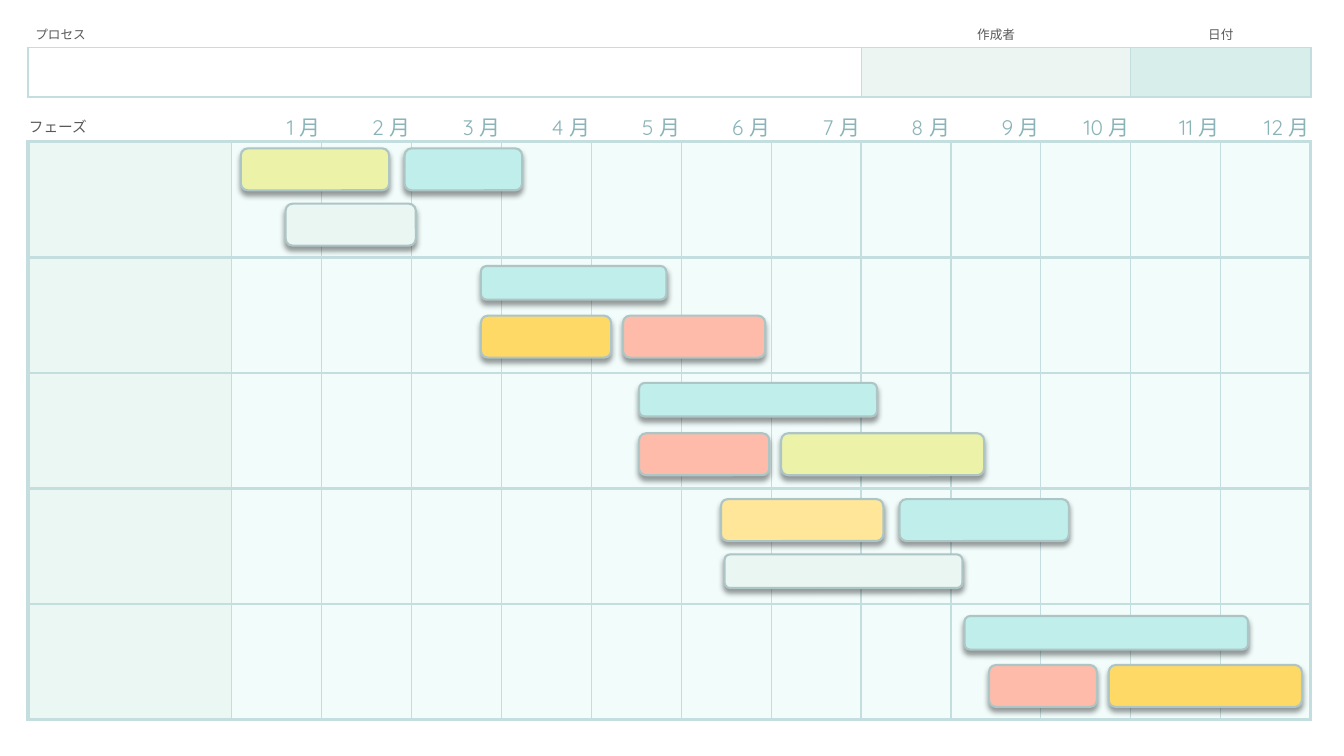
import pptx
import pptx.chart
import pptx.dml.color
import pptx.enum.shapes
import pptx.enum.text
import pptx.oxml
import pptx.oxml.ns
import pptx.util
from lxml import etree

Pt = pptx.util.Pt
ALIGN = pptx.enum.text.PP_ALIGN
FONT = "Quicksand"
GRID = "C4DDDE"
TEXT = "595959"
MONTH = "8AB4B8"
PHASE_FILL = "EAF7F2"
MONTH_FILL = "F2FDFB"
BAR_LINE = "AEC5C6"
NO_STYLE = "{2D5ABB26-0587-4C30-8999-92F81FD0307C}"
LIME, AQUA, MINT = "EDF2A9", "BFEEEB", "E9F6F2"
GOLD, CORAL, SAND = "FFD966", "FFBBAA", "FFE699"

PROCESS_COLUMNS = [
    ("プロセス", 595.4, "FFFFFF", ALIGN.LEFT, 5.2),
    ("作成者", 192.2, "EDF5F3", ALIGN.CENTER, 0.7),
    ("日付", 128.9, "D7EEEB", ALIGN.CENTER, 0.7),
]
PHASE_LABEL = "フェーズ"
MONTHS = [f"{number} 月" for number in range(1, 13)]
PHASE_COUNT = 5

TRACKS = [
    (106, 30, [(172, 106, LIME), (289, 84, AQUA)]),
    (145.5, 30, [(204, 93, MINT)]),
    (190, 24, [(343.5, 132.5, AQUA)]),
    (225.5, 30, [(343.5, 93, GOLD), (445, 101.5, CORAL)]),
    (273.5, 24, [(456.5, 170, AQUA)]),
    (309.5, 30, [(456.5, 93, CORAL), (558, 145, LIME)]),
    (356.5, 30, [(515, 116, SAND), (642.5, 121, AQUA)]),
    (396, 24, [(517.5, 170, MINT)]),
    (440, 24, [(689, 202.5, AQUA)]),
    (475, 30, [(706.5, 77, CORAL), (792, 138, GOLD)]),
]


def apply(target, values):
    for key, value in values.items():
        setattr(target, key, value)


def rgb(value):
    return pptx.dml.color.RGBColor.from_string(value)


def paint(fill, value):
    fill.solid()
    fill.fore_color.rgb = rgb(value)


def element(parent, tag, **attributes):
    return etree.SubElement(parent, pptx.oxml.ns.qn(tag), attributes)


def add_grid(slide, top, widths, heights):
    frame = slide.shapes.add_table(
        len(heights), len(widths), Pt(20), Pt(top), Pt(sum(widths)), Pt(sum(heights))
    )
    grid = frame.table
    apply(grid, {"first_row": False, "horz_banding": False})
    grid._tbl.tblPr.find(pptx.oxml.ns.qn("a:tableStyleId")).text = NO_STYLE
    for column, width in zip(grid.columns, widths):
        column.width = Pt(width)
    for row, height in zip(grid.rows, heights):
        row.height = Pt(height)
    return grid


def write_heading(cell, text, size, color, align, inset=0.7):
    apply(cell, {
        "margin_left": Pt(inset), "margin_right": Pt(0.7),
        "margin_top": Pt(0.7), "margin_bottom": 0,
        "vertical_anchor": pptx.enum.text.MSO_ANCHOR.MIDDLE,
    })
    paragraph = cell.text_frame.paragraphs[0]
    paragraph.alignment = align
    run = paragraph.add_run()
    run.text = text
    apply(run.font, {"size": Pt(size), "name": FONT})
    run.font.color.rgb = rgb(color)


def set_borders(cell, **widths):
    properties = cell._tc.get_or_add_tcPr()
    sides = [side for side in "LRTB" if side in widths]
    for position, side in enumerate(sides):
        line = element(properties, f"a:ln{side}", w=str(Pt(widths[side])))
        element(element(line, "a:solidFill"), "a:srgbClr", val=GRID)
        properties.insert(position, line)


def add_process_table(slide):
    widths = [column[1] for column in PROCESS_COLUMNS]
    grid = add_grid(slide, 13.9, widths, [20.2, 35.3])
    for index, (label, _, fill, align, inset) in enumerate(PROCESS_COLUMNS):
        heading, entry = grid.cell(0, index), grid.cell(1, index)
        write_heading(heading, label, 9, TEXT, align, inset)
        set_borders(heading, B=1)
        paint(entry.fill, fill)
        set_borders(entry, L=1 if index else 2.25, R=1, T=1, B=2.25)


def add_schedule(slide):
    last = len(MONTHS)
    grid = add_grid(slide, 78.8, [145.4] + [64.25] * last, [21.6] + [82.6] * PHASE_COUNT)
    write_heading(grid.cell(0, 0), PHASE_LABEL, 10.5, TEXT, ALIGN.LEFT)
    for index, month in enumerate(MONTHS, 1):
        write_heading(grid.cell(0, index), month, 15, MONTH, ALIGN.RIGHT)
    for column in range(last + 1):
        set_borders(grid.cell(0, column), B=2.25)
        for row in range(1, PHASE_COUNT + 1):
            cell = grid.cell(row, column)
            paint(cell.fill, MONTH_FILL if column else PHASE_FILL)
            set_borders(cell, L=1 if column else 3, R=2.25 if column == last else 1,
                        T=2.25, B=2.25)


def add_bar(slide, left, top, width, height, color):
    bar = slide.shapes.add_shape(
        pptx.enum.shapes.MSO_SHAPE.ROUNDED_RECTANGLE, Pt(left), Pt(top), Pt(width), Pt(height)
    )
    paint(bar.fill, color)
    paint(bar.line.fill, BAR_LINE)
    bar.line.width = Pt(1.5)
    bar.shadow.inherit = False
    effects = bar._element.spPr.find(pptx.oxml.ns.qn("a:effectLst"))
    shadow = element(effects, "a:outerShdw", blurRad=str(Pt(4)), dist=str(Pt(3)),
                     dir="5400000", algn="t", rotWithShape="0")
    element(element(shadow, "a:srgbClr", val="000000"), "a:alpha", val="40000")


def main():
    deck = pptx.Presentation()
    apply(deck, {"slide_width": Pt(960), "slide_height": Pt(540)})
    slide = deck.slides.add_slide(deck.slide_layouts[6])
    add_process_table(slide)
    add_schedule(slide)
    for top, height, bars in TRACKS:
        for left, width, color in bars:
            add_bar(slide, left, top, width, height, color)
    deck.save("out.pptx")


if __name__ == "__main__":
    main()
